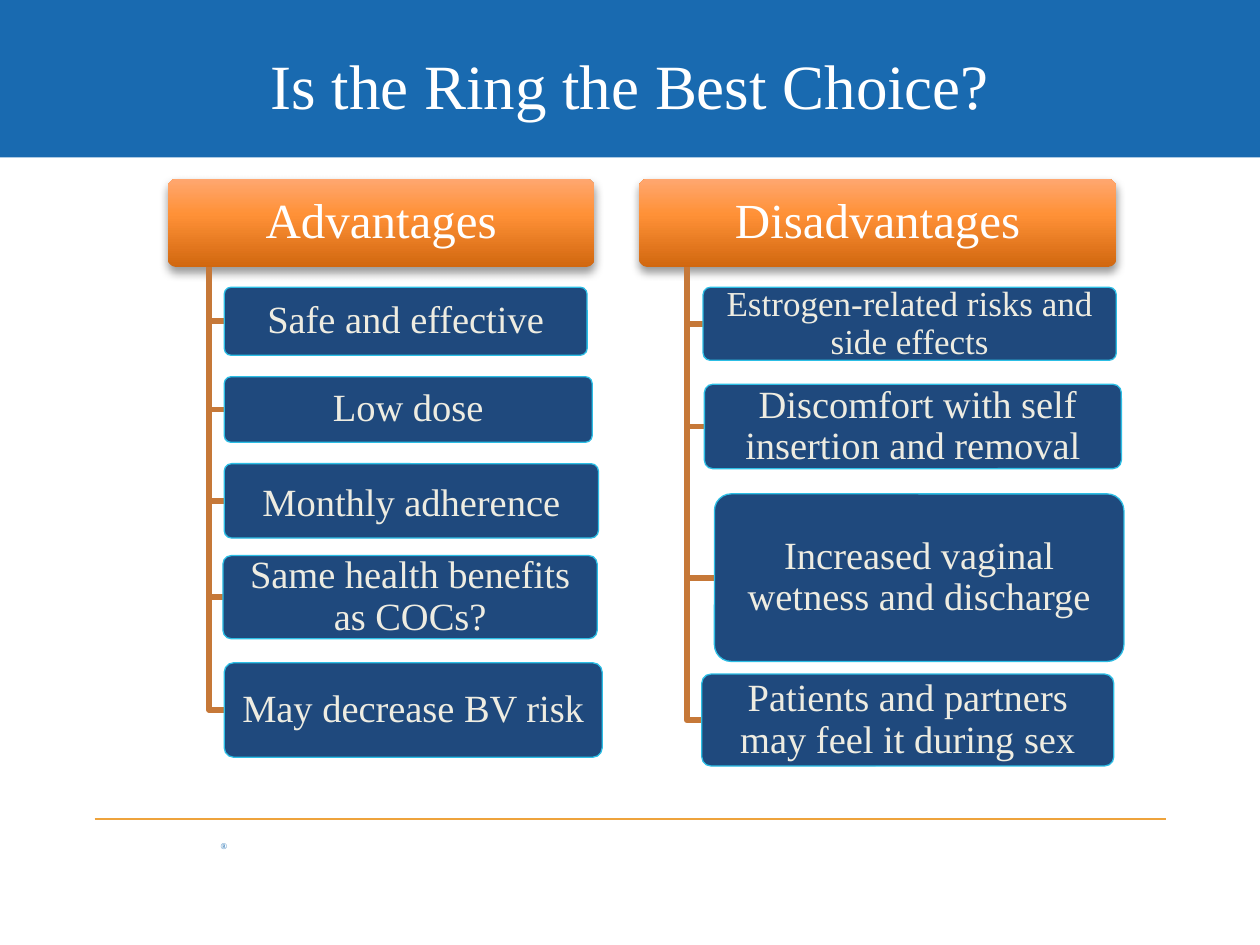
"""Build the slide weighing the advantages and disadvantages of the ring."""
from lxml import etree
from pptx import Presentation
from pptx.dml.color import RGBColor
from pptx.enum.shapes import MSO_CONNECTOR, MSO_SHAPE
from pptx.enum.text import MSO_ANCHOR, PP_ALIGN
from pptx.oxml.ns import qn
from pptx.util import Inches, Pt

RECT, ROUND = MSO_SHAPE.RECTANGLE, MSO_SHAPE.ROUNDED_RECTANGLE
STRAIGHT = MSO_CONNECTOR.STRAIGHT
MIDDLE, TOP = MSO_ANCHOR.MIDDLE, MSO_ANCHOR.TOP
CENTER, LEFT = PP_ALIGN.CENTER, PP_ALIGN.LEFT

TITLE = "Is the Ring the Best Choice?"
COLUMNS = [
    {"head": "Advantages", "box": (1.33, 1.42, 3.39, 0.7), "trunk": 1.66,
     "items": [
         ("Safe and effective", (1.78, 2.28, 2.88, 0.54), {}),
         ("Low dose", (1.78, 2.99, 2.92, 0.52), {}),
         ("Monthly adherence", (1.78, 3.68, 2.97, 0.59), {"spacing": 1.0}),
         ("Same health benefits as COCs?", (1.77, 4.41, 2.97, 0.66), {}),
         ("May decrease BV risk", (1.78, 5.26, 3, 0.75), {}),
     ]},
    {"head": "Disadvantages", "box": (5.07, 1.42, 3.79, 0.7), "trunk": 5.45,
     "items": [
         ("Estrogen-related risks and side effects", (5.58, 2.28, 3.28, 0.58),
          {"size": 20, "inset": (0.04, 0.03)}),
         (" Discomfort with self insertion and removal", (5.59, 3.05, 3.31, 0.67), {}),
         ("Increased vaginal wetness and discharge", (5.67, 3.92, 3.25, 1.33), {}),
         ("Patients and partners may feel it during sex", (5.57, 5.35, 3.27, 0.73), {}),
     ]},
]

THEME = {
    "font": "Times New Roman",
    "band": "196AB0", "rule": "EEA33C", "white": "FFFFFF",
    "branch": "C67838", "item": "1F497D", "edge": "2CBEE5", "item_text": "EEECE1",
    "head": [(0, "D1670F"), (0.6, "FF9137"), (1, "FFA770")],
    "title_size": 36, "head_size": 28, "item_size": 22, "mark_size": 5,
}


def rgb(name):
    return RGBColor.from_string(THEME.get(name, name))


def write(s, text, size, color, align=CENTER, anchor=MIDDLE, inset=(0.1, 0.05), spacing=1.0):
    tf = s.text_frame
    tf.word_wrap = True
    tf.vertical_anchor = anchor
    tf.margin_left = tf.margin_right = Inches(inset[0])
    tf.margin_top = tf.margin_bottom = Inches(inset[1])
    p = tf.paragraphs[0]
    p.alignment = align
    p.line_spacing = spacing
    r = p.add_run()
    r.text = text
    r.font.name = THEME["font"]
    r.font.size = Pt(size)
    r.font.color.rgb = rgb(color)


def add_box(slide, kind, box, fill=None, line=None):
    s = slide.shapes.add_shape(kind, *map(Inches, box))
    s.shadow.inherit = False
    if kind == ROUND:
        s.adjustments[0] = 0.1
    if fill:
        s.fill.solid()
        s.fill.fore_color.rgb = rgb(fill)
    if line:
        s.line.color.rgb = rgb(line)
        s.line.width = Pt(0.75)
    else:
        s.line.fill.background()
    return s


def add_head(slide, text, box):
    s = add_box(slide, ROUND, box)
    s.fill.gradient()
    s.fill.gradient_angle = 90
    spPr = s._element.spPr
    stops = spPr.find(".//" + qn("a:gsLst"))
    for stop in list(stops):
        stops.remove(stop)
    for pos, color in THEME["head"]:
        stop = etree.SubElement(stops, qn("a:gs"), pos=str(int(pos * 100000)))
        etree.SubElement(stop, qn("a:srgbClr"), val=color)
    shadow = etree.SubElement(
        spPr.find(qn("a:effectLst")), qn("a:outerShdw"), blurRad=str(Pt(5.2)),
        dist=str(Pt(3)), dir="5400000", rotWithShape="0")
    black = etree.SubElement(shadow, qn("a:srgbClr"), val="000000")
    etree.SubElement(black, qn("a:alpha"), val="40000")
    write(s, text, THEME["head_size"], "white", inset=(0.06, 0.04), spacing=0.9)


def add_branch(slide, x, top, end_x, end_y):
    fb = slide.shapes.build_freeform(Inches(x), Inches(top))
    fb.add_line_segments([(Inches(x), Inches(end_y)), (Inches(end_x), Inches(end_y))], close=False)
    s = fb.convert_to_shape()
    s.shadow.inherit = False
    s.fill.background()
    s.line.color.rgb = rgb("branch")
    s.line.width = Pt(3.35)


def add_column(slide, head, box, trunk, items):
    add_head(slide, head, box)
    for text, item, extra in items:
        left, top, _, height = item
        add_branch(slide, trunk, box[1] + box[3], left, top + height / 2)
        s = add_box(slide, ROUND, item, "item", "edge")
        look = {"size": THEME["item_size"], "inset": (0.05, 0.03), "spacing": 0.9, **extra}
        write(s, text, color="item_text", **look)


def main():
    prs = Presentation()
    prs.slide_width, prs.slide_height = Inches(10), Inches(7.5)
    slide = prs.slides.add_slide(prs.slide_layouts[5])

    title = slide.shapes.title
    title.left, title.top, title.width, title.height = map(Inches, (0.5, 0.17, 9, 1))
    write(title, TITLE, THEME["title_size"], "white")
    band = add_box(slide, RECT, (0, 0, 10, 1.25), "band")
    title._element.addprevious(band._element)

    mark = slide.shapes.add_textbox(*map(Inches, (1.75, 6.67, 0.25, 0.08)))
    write(mark, "®", THEME["mark_size"], "band", align=LEFT, anchor=TOP, inset=(0, 0))

    rule = slide.shapes.add_connector(STRAIGHT, *map(Inches, (0.75, 6.5, 9.25, 6.5)))
    rule.line.color.rgb = rgb("rule")
    rule.line.width = Pt(0.75)
    etree.SubElement(rule._element.spPr, qn("a:effectLst"))

    for column in COLUMNS:
        add_column(slide, **column)
    prs.save("out.pptx")


if __name__ == "__main__":
    main()
